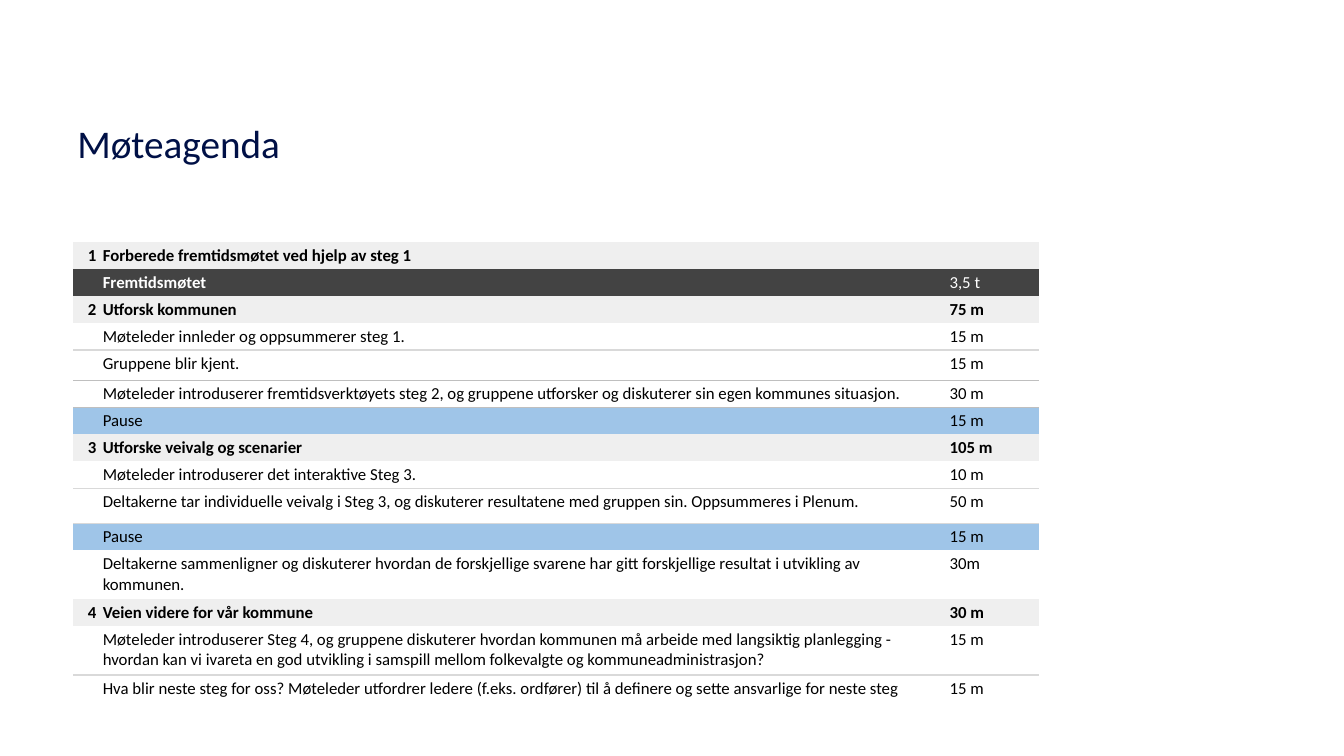
import pptx
import pptx.dml.color
import pptx.enum.text
import pptx.oxml
import pptx.oxml.ns
import pptx.util

Cm = pptx.util.Cm
Pt = pptx.util.Pt
ALIGN = pptx.enum.text.PP_ALIGN
ANCHOR = pptx.enum.text.MSO_ANCHOR
PLAIN_GRID = "{2D5ABB26-0587-4C30-8999-92F81FD0307C}"

# kind: (fill, text colour, bold title, bold time)
KINDS = {
    "step": ("EFEFEF", "000000", True, True),
    "meeting": ("434343", "FFFFFF", True, False),
    "item": (None, "000000", False, False),
    "pause": ("9FC5E8", "000000", False, False),
}
LINE = 0.68  # height of a row with one line of text
PAIR = 1.23  # height of a row with two lines of text
LIGHT = "D9D9D9"
DARK = "BFBFBF"

# kind, number, title, time, height in cm, colour of the rule below
AGENDA = [
    ("step", "1", "Forberede fremtidsmøtet ved hjelp av steg 1", "", LINE, None),
    ("meeting", "", "Fremtidsmøtet", "3,5 t", LINE, None),
    ("step", "2", "Utforsk kommunen", "75 m", LINE, None),
    ("item", "", "Møteleder innleder og oppsummerer steg 1.", "15 m", LINE, LIGHT),
    ("item", "", "Gruppene blir kjent.", "15 m", 0.76, DARK),
    ("item", "", "Møteleder introduserer fremtidsverktøyets steg 2, og gruppene "
     "utforsker og diskuterer sin egen kommunes situasjon.", "30 m", LINE, None),
    ("pause", "", "Pause", "15 m", LINE, None),
    ("step", "3", "Utforske veivalg og scenarier", "105 m", LINE, None),
    ("item", "", "Møteleder introduserer det interaktive Steg 3.", "10 m", LINE, LIGHT),
    ("item", "", "Deltakerne tar individuelle veivalg i Steg 3, og diskuterer "
     "resultatene med gruppen sin. Oppsummeres i Plenum.", "50 m", 0.89, None),
    ("pause", "", "Pause", "15 m", LINE, None),
    ("item", "", "Deltakerne sammenligner og diskuterer hvordan de forskjellige "
     "svarene har gitt forskjellige resultat i utvikling av kommunen.", "30m", PAIR, None),
    ("step", "4", "Veien videre for vår kommune", "30 m", LINE, None),
    ("item", "", "Møteleder introduserer Steg 4, og gruppene diskuterer hvordan "
     "kommunen må arbeide med langsiktig planlegging - hvordan kan vi ivareta en god "
     "utvikling i samspill mellom folkevalgte og kommuneadministrasjon?",
     "15 m", PAIR, LIGHT),
    ("item", "", "Hva blir neste steg for oss? Møteleder utfordrer ledere (f.eks. "
     "ordfører) til å definere og sette ansvarlige for neste steg", "15 m", 0.81, None),
]


def paint(text):
    return pptx.dml.color.RGBColor.from_string(text)


class Sheet:
    face = "Calibri"
    size = 12
    inset = Cm(0.08)

    def __init__(self, slide):
        self.slide = slide

    def add_run(self, para, text, size, tone, bold=False):
        run = para.add_run()
        run.text = text
        font = run.font
        font.name, font.size, font.bold = self.face, Pt(size), bold
        font.color.rgb = paint(tone)

    def title(self, text, left, top, width, height):
        frame = self.slide.shapes.add_textbox(
            Cm(left), Cm(top), Cm(width), Cm(height)).text_frame
        frame.word_wrap = True
        frame.vertical_anchor = ANCHOR.MIDDLE
        self.add_run(frame.paragraphs[0], text, 28, "001046")

    def edge(self, cell, tag, tone):
        """Draw the top (lnT) or bottom (lnB) border of a cell."""
        space = pptx.oxml.ns.nsdecls("a")
        line = pptx.oxml.parse_xml(
            f'<a:{tag} {space} w="{Pt(1)}"><a:solidFill><a:srgbClr val="{tone}"/>'
            f'</a:solidFill></a:{tag}>')
        cell._tc.get_or_add_tcPr().insert(0, line)

    def fill(self, cell, text, back, tone, bold, align):
        cell.margin_left = cell.margin_right = self.inset
        cell.margin_top = cell.margin_bottom = self.inset
        if back:
            cell.fill.solid()
            cell.fill.fore_color.rgb = paint(back)
        else:
            cell.fill.background()
        para = cell.text_frame.paragraphs[0]
        para.alignment = align
        if text:
            self.add_run(para, text, self.size, tone, bold)
        else:
            # keeps an empty cell from growing past its row
            end = pptx.oxml.parse_xml(
                f'<a:endParaRPr {pptx.oxml.ns.nsdecls("a")} sz="{self.size * 100}"/>')
            para._p.append(end)

    def table(self, rows, left, top, widths):
        high = sum(row[4] for row in rows)
        grid = self.slide.shapes.add_table(
            len(rows), len(widths), Cm(left), Cm(top), Cm(sum(widths)), Cm(high)).table
        grid.first_row = grid.horz_banding = False
        grid._tbl.tblPr.find(pptx.oxml.ns.qn("a:tableStyleId")).text = PLAIN_GRID
        for col, width in zip(grid.columns, widths):
            col.width = Cm(width)
        above = None
        for r, (kind, mark, text, time, height, below) in enumerate(rows):
            back, tone, strong, heavy = KINDS[kind]
            grid.rows[r].height = Cm(height)
            parts = ((mark, True, ALIGN.RIGHT), (text, strong, ALIGN.LEFT),
                     (time, heavy, ALIGN.LEFT))
            for c, (word, bold, align) in enumerate(parts):
                cell = grid.cell(r, c)
                self.fill(cell, word, back, tone, bold, align)
                for tag, rule in (("lnB", below), ("lnT", above)):
                    if rule:
                        self.edge(cell, tag, rule)
            above = below


def main():
    deck = pptx.Presentation()
    deck.slide_width, deck.slide_height = Cm(33.87), Cm(19.05)
    sheet = Sheet(deck.slides.add_slide(deck.slide_layouts[6]))
    sheet.title("Møteagenda", 1.7, 2.03, 30.48, 3.15)
    sheet.table(AGENDA, 1.85, 6.1, (0.66, 21.34, 2.34))
    deck.save("out.pptx")


if __name__ == "__main__":
    main()
